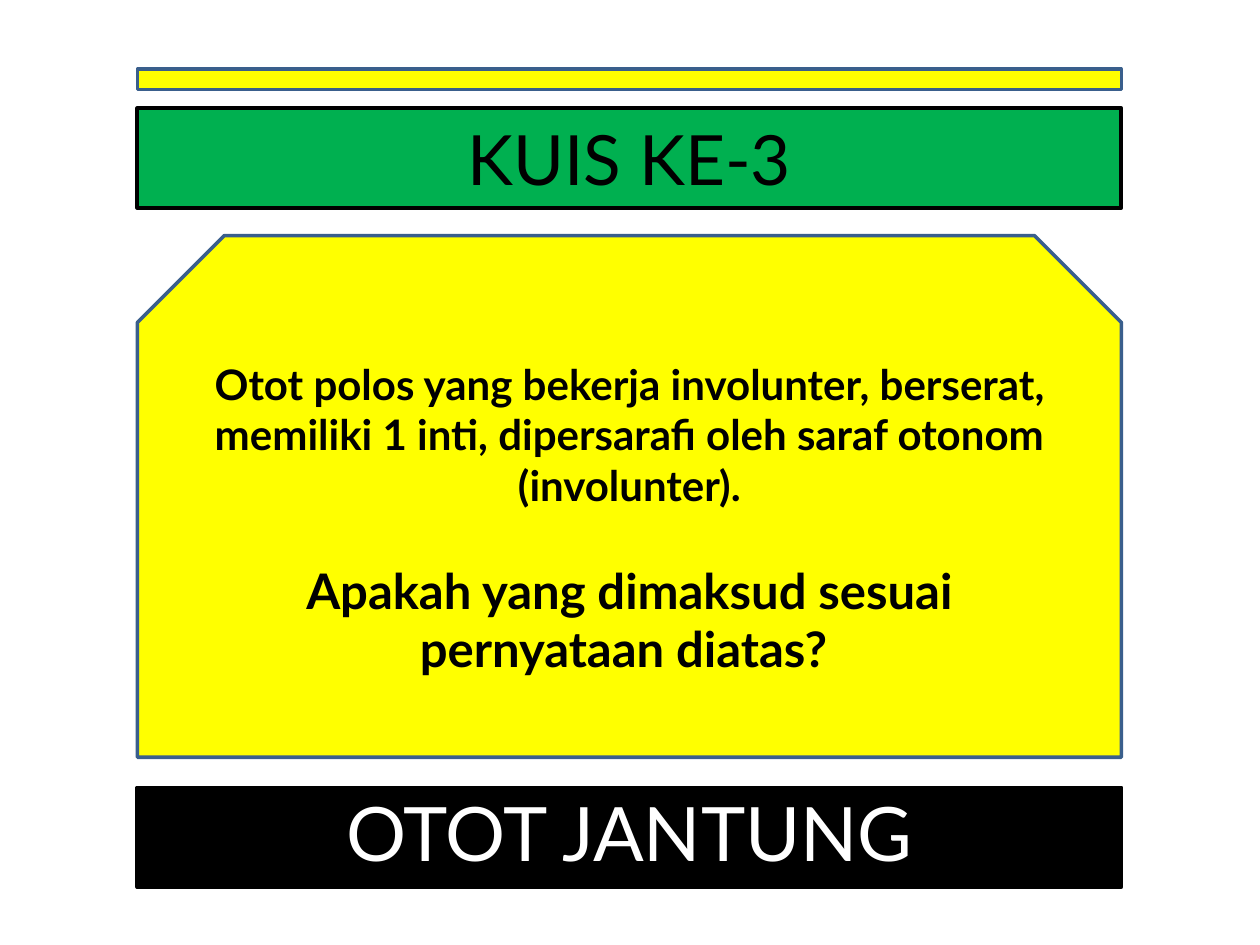
from pptx import Presentation
from pptx.dml.color import RGBColor
from pptx.enum.shapes import MSO_SHAPE as Shape
from pptx.enum.text import MSO_ANCHOR as Anchor, PP_ALIGN as Align
from pptx.util import Inches, Pt

LEFT, WIDTH = 1.09, 7.81
BLACK, WHITE, GREEN, YELLOW, BLUE = "000000", "FFFFFF", "00B050", "FFFF00", "3A5F8C"
STATEMENT = ("Otot polos yang bekerja involunter, berserat, memiliki 1 inti, "
             "dipersarafi oleh saraf otonom (involunter).")
QUESTION = "Apakah yang dimaksud sesuai pernyataan diatas? "


def paint(target, color):
    """Set a fill or font colour from a hex string."""
    if hasattr(target, "solid"):
        target.solid()
        target = target.fore_color
    else:
        target = target.color
    target.rgb = RGBColor.from_string(color)


def apply_format(target, values):
    """Set each attribute named in a dict of format values."""
    for name, value in values.items():
        setattr(target, name, value)


def add_panel(slide, top, height, fill, border, border_width, outline=Shape.RECTANGLE):
    """Add a filled, outlined panel across the content column."""
    panel = slide.shapes.add_shape(
        outline, Inches(LEFT), Inches(top), Inches(WIDTH), Inches(height))
    panel.shadow.inherit = False
    paint(panel.fill, fill)
    paint(panel.line, border)
    panel.line.width = Pt(border_width)
    return panel


def write_lines(panel, lines, color, bold=False):
    """Write centred paragraphs given as (text, size, paragraph format)."""
    frame = panel.text_frame
    apply_format(frame, {"word_wrap": True, "vertical_anchor": Anchor.MIDDLE})
    for index, (text, size, layout) in enumerate(lines):
        paragraph = frame.add_paragraph() if index else frame.paragraphs[0]
        apply_format(paragraph, {"alignment": Align.CENTER, **layout})
        run = paragraph.add_run()
        run.text = text
        apply_format(run.font, {"name": "Lato", "size": Pt(size), "bold": bold})
        paint(run.font, color)


def main():
    """Build the quiz slide and save it."""
    deck = Presentation()
    apply_format(deck, {"slide_width": Inches(10), "slide_height": Inches(7.5)})
    slide = deck.slides.add_slide(deck.slide_layouts[6])

    heading = add_panel(slide, 0.86, 0.79, GREEN, BLACK, 2.25)
    write_lines(heading, [("KUIS KE-3", 39.6, {})], BLACK)

    quiz = add_panel(slide, 1.87, 4.14, YELLOW, BLUE, 2, Shape.SNIP_2_SAME_RECTANGLE)
    write_lines(quiz, [(STATEMENT, 24, {}),
                       (QUESTION, 28, {"space_before": Pt(28.8)})], BLACK, bold=True)

    add_panel(slide, 0.55, 0.16, YELLOW, BLUE, 2)

    answer = add_panel(slide, 6.25, 0.79, BLACK, BLACK, 2.25)
    write_lines(answer, [("OTOT JANTUNG", 42.9, {"line_spacing": 0.9})], WHITE)

    deck.save("out.pptx")


if __name__ == "__main__":
    main()
